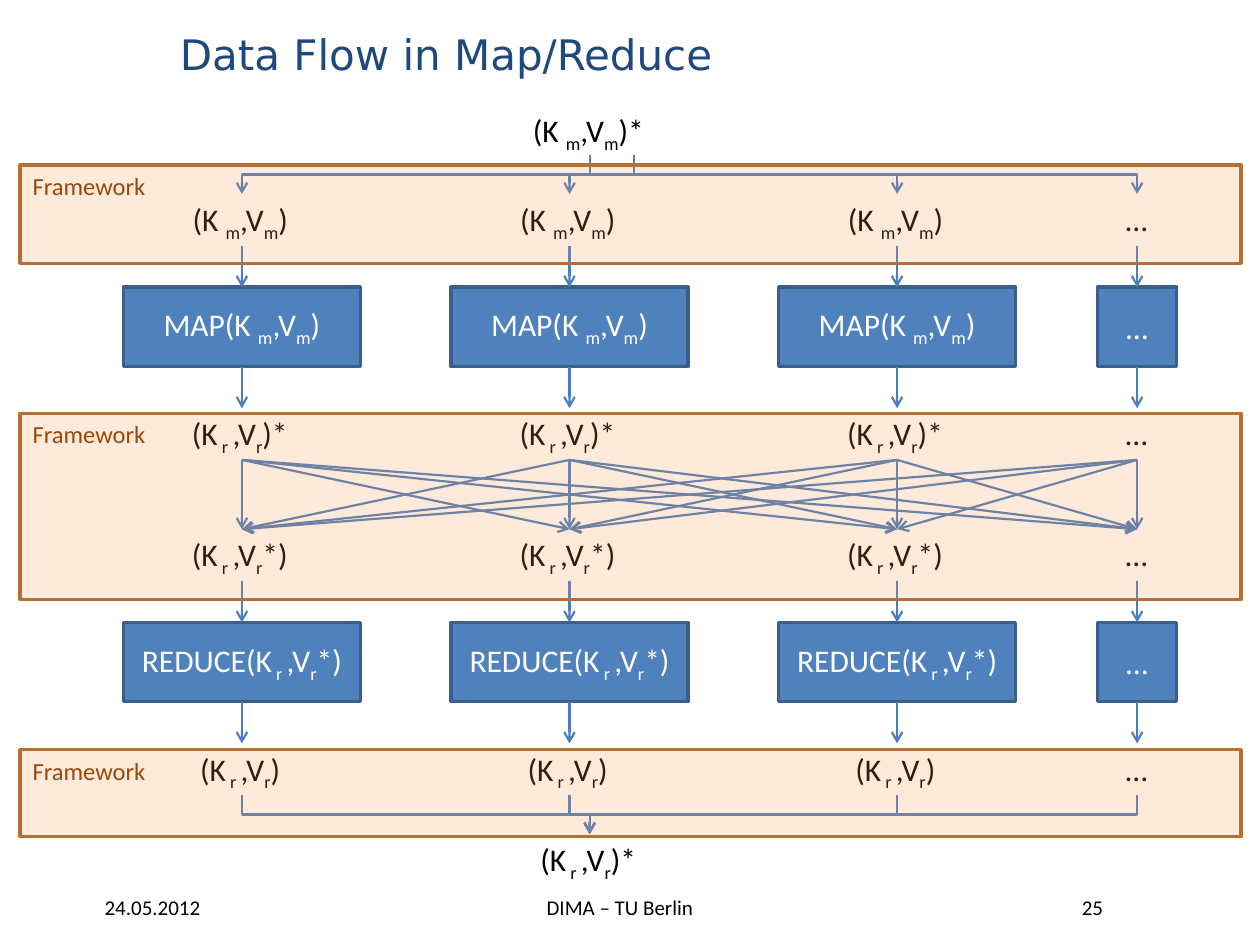
from pptx import Presentation
from pptx.dml.color import RGBColor
from pptx.enum.shapes import MSO_CONNECTOR, MSO_SHAPE
from pptx.enum.text import MSO_ANCHOR, MSO_AUTO_SIZE, PP_ALIGN
from pptx.oxml.ns import qn
from pptx.oxml.xmlchemy import OxmlElement
from pptx.util import Inches, Pt

STRAIGHT, ELBOW = MSO_CONNECTOR.STRAIGHT, MSO_CONNECTOR.ELBOW
RECT = MSO_SHAPE.RECTANGLE
TOP, MIDDLE = MSO_ANCHOR.TOP, MSO_ANCHOR.MIDDLE
LEFT, CENTER = PP_ALIGN.LEFT, PP_ALIGN.CENTER
GROW = MSO_AUTO_SIZE.SHAPE_TO_FIT_TEXT

BLACK = RGBColor(0x00, 0x00, 0x00)
WHITE = RGBColor(0xFF, 0xFF, 0xFF)
NAVY = RGBColor(0x1F, 0x49, 0x7D)
BLUE = RGBColor(0x4F, 0x81, 0xBD)
BLUE_EDGE = RGBColor(0x3A, 0x5F, 0x8C)
ARROW = RGBColor(0x4B, 0x7E, 0xBC)
ORANGE = RGBColor(0xF7, 0x96, 0x46)
ORANGE_EDGE = RGBColor(0xB7, 0x6F, 0x34)
BROWN = RGBColor(0x98, 0x48, 0x07)

WIDTH, HEIGHT = Inches(10), Inches(7.5)
COL, ROW = WIDTH / 100, HEIGHT / 75
FLOW_X, FLOW_W = 9.8, 83.6
BOX_W, BOX_H, PITCH = 18.8, 6.3, 26
LABEL_H, ELLIPSIS_W = 4.04, 3.8

MAP_PAIR = "(K |m|,V|m|)"
REDUCE_PAIR = "(K| r |,V|r|)"
REDUCE_LIST = "(K| r |,V|r|*)"


def grid(x, y, w, h):
    """Turn grid columns and rows into slide lengths."""
    return round(x * COL), round(y * ROW), round(w * COL), round(h * ROW)


def centers(box):
    """Return the centres of the three lanes and the ellipsis lane."""
    x, _, w, _ = box
    return [x + BOX_W / 2 + PITCH * i for i in range(3)] + [x + w - BOX_H / 2]


def write(sp, text, size, color, align=LEFT, anchor=TOP, font="Calibri"):
    """Write one paragraph, with every second part between bars lowered."""
    tf = sp.text_frame
    tf.vertical_anchor = anchor
    p = tf.paragraphs[0]
    p.alignment = align
    p.font.size, p.font.name = Pt(size), font
    p.font.color.rgb = color
    for i, part in enumerate(text.split("|")):
        r = p.add_run()
        r.text = part
        if i % 2:
            r.font._element.set("baseline", "-25000")


def text_box(s, box, text, size, color, wrap=True, **style):
    """Add a text box."""
    sp = s.shapes.add_textbox(*grid(*box))
    sp.text_frame.word_wrap = wrap
    if not wrap:
        sp.text_frame.auto_size = GROW
    write(sp, text, size, color, **style)


def rectangle(s, box, fill, edge):
    """Add a flat rectangle."""
    sp = s.shapes.add_shape(RECT, *grid(*box))
    sp.shadow.inherit = False
    sp.fill.solid()
    sp.fill.fore_color.rgb = fill
    sp.line.color.rgb = edge
    sp.line.width = Pt(2)
    return sp


def arrow(s, kind, x1, y1, x2, y2):
    """Add a connector with an open arrowhead."""
    c = s.shapes.add_connector(kind, *grid(x1, y1, x2, y2))
    c.line.color.rgb = ARROW
    c.line.width = Pt(1.25)
    head = OxmlElement("a:tailEnd")
    head.set("type", "arrow")
    c.line._get_or_add_ln().append(head)
    c._element.spPr.append(OxmlElement("a:effectLst"))
    return c


def elbow(s, x1, y1, x2, y2):
    """Add a connector that leaves and arrives vertically."""
    cx, cy = (x1 + x2) / 2, (y1 + y2) / 2
    half_w, half_h = abs(x2 - x1) / 2, (y2 - y1) / 2
    side = 1 if x2 > x1 else -1
    c = arrow(s, ELBOW, cx + side * half_h, cy - half_w,
              cx - side * half_h, cy + half_w)
    turn = 270 if side > 0 else 90
    c._element.spPr.find(qn("a:xfrm")).set("rot", str(turn * 60000))


def label_row(s, box, text, w):
    """Place a pair label in each lane and an ellipsis in the last."""
    _, y, _, h = box
    items = [(text, w)] * 3 + [("…", ELLIPSIS_W)]
    for cx, (item, item_w) in zip(centers(box), items):
        text_box(s, (cx - item_w / 2, y, item_w, h), item, 18, BLACK, wrap=False)


def operator_row(s, box, text):
    """Place an operator box in each lane and a square in the last."""
    _, y, _, h = box
    items = [(text, BOX_W)] * 3 + [("…", BOX_H)]
    for cx, (item, w) in zip(centers(box), items):
        sp = rectangle(s, (cx - w / 2, y, w, h), BLUE, BLUE_EDGE)
        write(sp, item, 18, WHITE, CENTER, MIDDLE)


def arrow_row(s, box):
    """Run an arrow down each lane."""
    _, y, _, h = box
    for cx in centers(box):
        arrow(s, STRAIGHT, cx, y, cx, y + h)


def shuffle(s, box):
    """Join every lane at the top with every lane at the bottom."""
    _, y, _, h = box
    for x1 in centers(box):
        for x2 in centers(box):
            arrow(s, STRAIGHT, x1, y, x2, y + h)


def scatter(s, box, starts):
    """Spread the input over the lanes."""
    _, y, _, h = box
    for x1, x2 in zip(starts, centers(box)):
        elbow(s, x1, y, x2, y + h)


def gather(s, box, end):
    """Bring the lanes together in the output."""
    _, y, _, h = box
    for cx in centers(box):
        elbow(s, cx, y, end, y + h)


def framework(s, box):
    """Lay a translucent framework band over its steps."""
    sp = rectangle(s, box, ORANGE, ORANGE_EDGE)
    alpha = OxmlElement("a:alpha")
    alpha.set("val", "20000")
    sp._element.spPr.find(qn("a:solidFill"))[0].append(alpha)
    write(sp, "Framework", 14, BROWN)


def footer(s, box):
    """Place the date, the venue and the page number."""
    x, y, w, h = box
    items = [("24.05.2012", 0, 14.8), ("DIMA – TU Berlin", 32, 25),
             ("25", w - 17.2, 17.2)]
    for text, dx, item_w in items:
        text_box(s, (x + dx, y, item_w, h), text, 12, BLACK,
                 align=CENTER, anchor=MIDDLE)


def main():
    """Build the slide."""
    prs = Presentation()
    prs.slide_width, prs.slide_height = WIDTH, HEIGHT
    s = prs.slides.add_slide(prs.slide_layouts[6])

    def lane(y, h):
        return FLOW_X, y, FLOW_W, h

    footer(s, (4.7, 70.5, 90.6, 3))
    text_box(s, (13.3, 0.8, 75, 7), "Data Flow in Map/Reduce", 24, NAVY,
             anchor=MIDDLE, font="DejaVu Sans")
    text_box(s, (41.3, 8.3, 11.1, LABEL_H), MAP_PAIR + "*", 18, BLACK, wrap=False)
    text_box(s, (41.9, 66.2, 9.9, LABEL_H), REDUCE_PAIR + "*", 18, BLACK, wrap=False)
    for y, text, w in [(15.4, MAP_PAIR, 9.8), (32.4, REDUCE_PAIR + "*", 9.9),
                       (42, REDUCE_LIST, 9.9), (59, REDUCE_PAIR, 8.6)]:
        label_row(s, lane(y, LABEL_H), text, w)
    operator_row(s, lane(22.8, BOX_H), "MAP" + MAP_PAIR)
    operator_row(s, lane(49.4, BOX_H), "REDUCE" + REDUCE_LIST)
    scatter(s, lane(12.3, 3.1), [50.3, 50.3, 50.3, 46.8])
    for y in (19.5, 29.1, 46.1, 55.7):
        arrow_row(s, lane(y, 3.3))
    shuffle(s, lane(36.5, 5.5))
    gather(s, lane(63.1, 3.1), 46.8)
    for y, h in [(32.8, 14.8), (13.1, 7.8), (59.5, 6.9)]:
        framework(s, (1.6, y, 96.9, h))
    prs.save("out.pptx")


if __name__ == "__main__":
    main()
